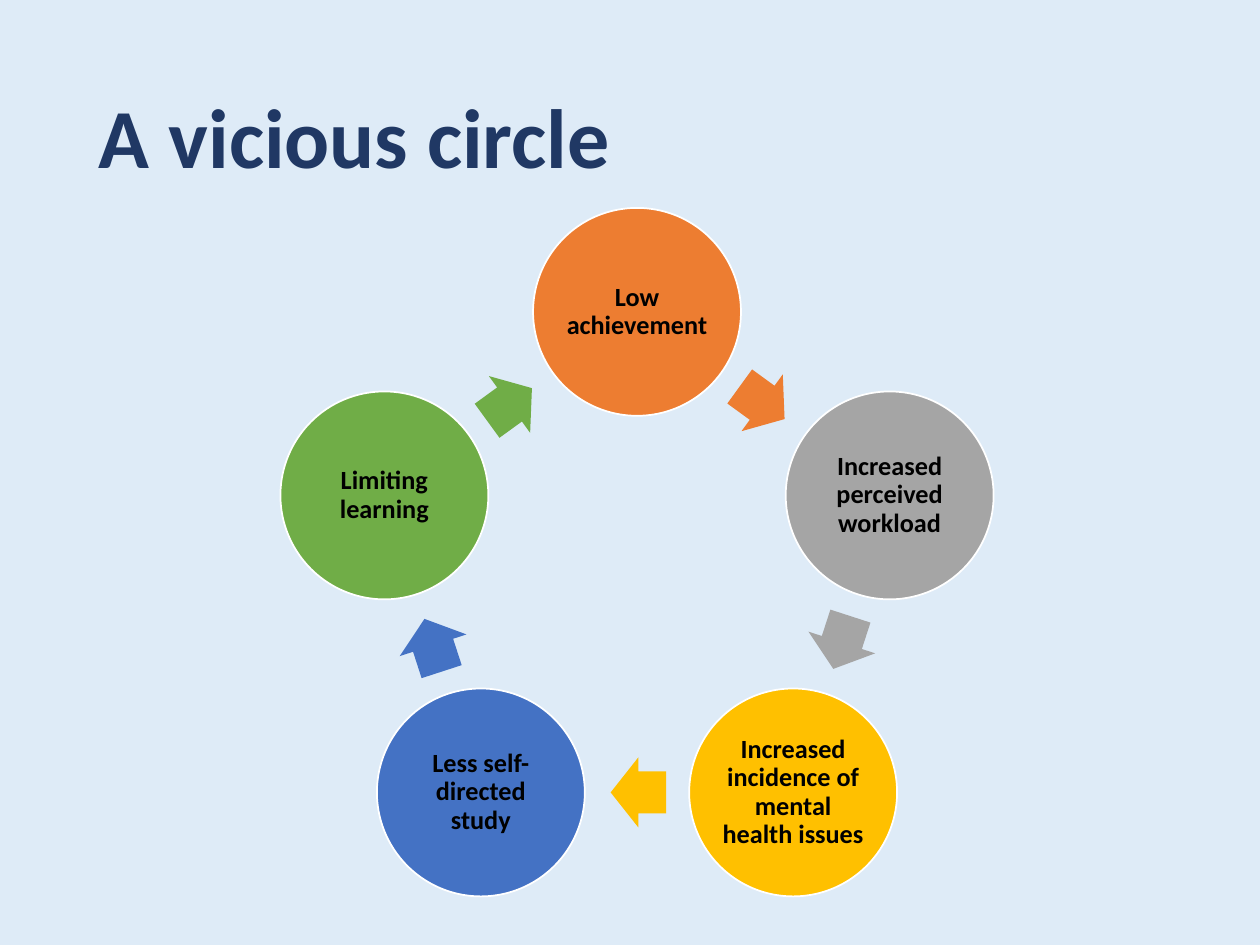
from math import cos, radians, sin

from pptx import Presentation
from pptx.dml.color import RGBColor
from pptx.enum.shapes import MSO_SHAPE
from pptx.enum.text import MSO_ANCHOR, PP_ALIGN
from pptx.util import Pt

COLORS = {
    "background": "DEEBF7",
    "title": "203864",
    "label": "000000",
    "outline": "FFFFFF",
    "orange": "ED7D31",
    "gray": "A5A5A5",
    "yellow": "FFC000",
    "blue": "4472C4",
    "green": "70AD47",
}
STAGES = [
    ("Low achievement", "orange"),
    ("Increased perceived workload", "gray"),
    ("Increased incidence of mental health issues", "yellow"),
    ("Less self-directed study", "blue"),
    ("Limiting learning", "green"),
]
FONT = "Calibri"
CENTER_X, CENTER_Y = 364, 330
CYCLE_RADIUS = 151.8
STAGE_DIAMETER = 118.8
ARROW_LENGTH, ARROW_WIDTH = 31.7, 40.1
ARROW_SETBACK = 0.8


def color(name):
    return RGBColor.from_string(COLORS[name])


def write_text(frame, text, size, color_name, align):
    frame.word_wrap = True
    frame.vertical_anchor = MSO_ANCHOR.MIDDLE
    frame.text = text
    paragraph = frame.paragraphs[0]
    paragraph.alignment = align
    paragraph.line_spacing = 0.9
    font = paragraph.runs[0].font
    font.name, font.size, font.bold = FONT, Pt(size), True
    font.color.rgb = color(color_name)


def add_title(slide, text):
    title = slide.shapes.add_textbox(Pt(49.5), Pt(28.8), Pt(621), Pt(104.4))
    write_text(title.text_frame, text, 48, "title", PP_ALIGN.LEFT)


def add_filled(slide, preset, x, y, width, height, fill):
    """Add a flat shape centred on x, y."""
    shape = slide.shapes.add_shape(
        preset, Pt(x - width / 2), Pt(y - height / 2), Pt(width), Pt(height))
    shape.shadow.inherit = False
    shape.fill.solid()
    shape.fill.fore_color.rgb = color(fill)
    return shape


def add_stage(slide, angle, label, fill):
    """Add a labelled circle, with the angle clockwise from the top."""
    x = CENTER_X + CYCLE_RADIUS * sin(radians(angle))
    y = CENTER_Y - CYCLE_RADIUS * cos(radians(angle))
    stage = add_filled(slide, MSO_SHAPE.OVAL, x, y,
                       STAGE_DIAMETER, STAGE_DIAMETER, fill)
    stage.line.color.rgb = color("outline")
    stage.line.width = Pt(1)
    frame = stage.text_frame
    frame.margin_left = frame.margin_right = Pt(1.5)
    frame.margin_top = frame.margin_bottom = Pt(1.5)
    write_text(frame, label, 15, "label", PP_ALIGN.CENTER)


def add_arrow(slide, angle, step, fill):
    """Add an arrow along the chord between two neighbouring stages."""
    distance = CYCLE_RADIUS * cos(radians(step / 2))
    across, along = sin(radians(angle)), cos(radians(angle))
    x = CENTER_X + distance * across - ARROW_SETBACK * along
    y = CENTER_Y - distance * along - ARROW_SETBACK * across
    arrow = add_filled(slide, MSO_SHAPE.RIGHT_ARROW, x, y,
                       ARROW_LENGTH, ARROW_WIDTH, fill)
    arrow.line.fill.background()
    arrow.adjustments[0] = 0.6
    arrow.adjustments[1] = 0.5
    arrow.rotation = angle


def main():
    presentation = Presentation()
    presentation.slide_width, presentation.slide_height = Pt(720), Pt(540)
    slide = presentation.slides.add_slide(presentation.slide_layouts[6])
    slide.background.fill.solid()
    slide.background.fill.fore_color.rgb = color("background")

    add_title(slide, "A vicious circle")
    step = 360 / len(STAGES)
    for index, (label, fill) in enumerate(STAGES):
        add_stage(slide, index * step, label, fill)
        add_arrow(slide, (index + 0.5) * step, step, fill)
    presentation.save("out.pptx")


if __name__ == "__main__":
    main()
